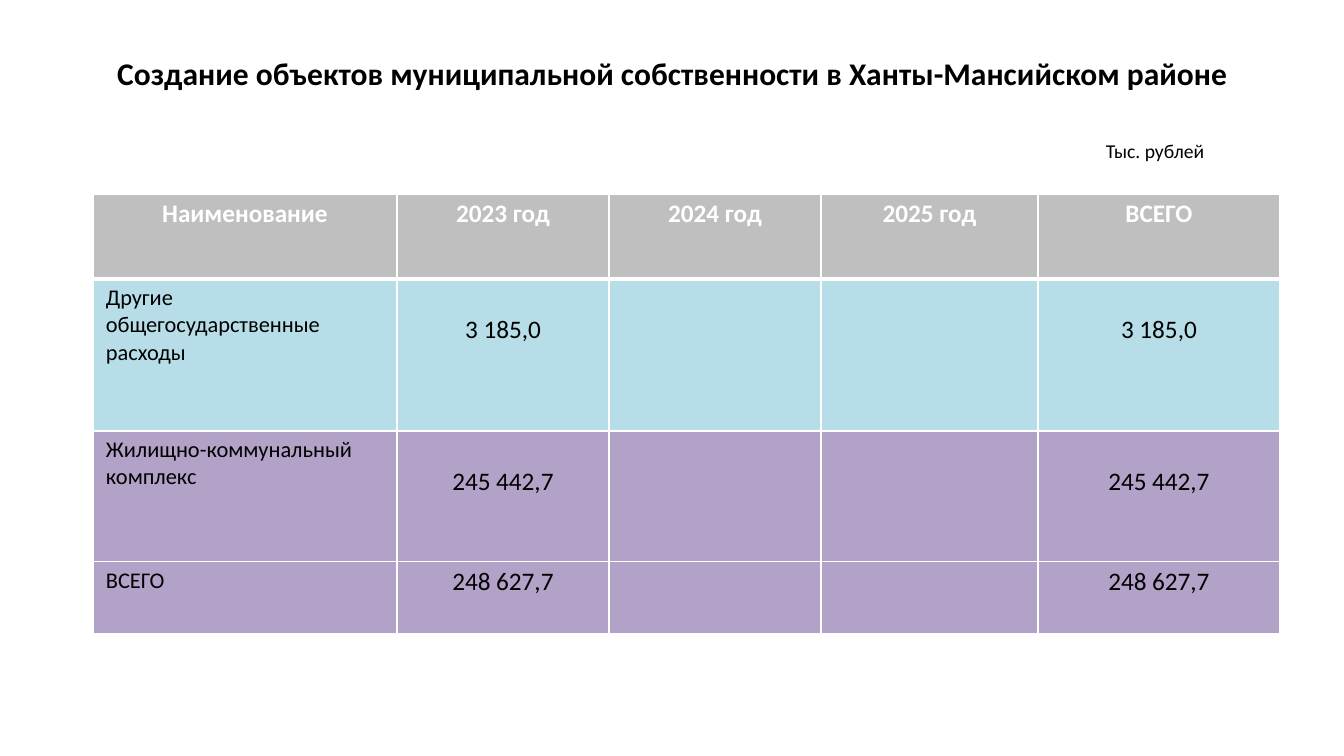
from lxml import etree
from pptx import Presentation
from pptx.dml.color import RGBColor
from pptx.enum.text import MSO_ANCHOR, MSO_AUTO_SIZE, PP_ALIGN
from pptx.oxml.ns import qn
from pptx.util import Emu, Pt

LEFT, CENTER = PP_ALIGN.LEFT, PP_ALIGN.CENTER
MIDDLE, TOP = MSO_ANCHOR.MIDDLE, MSO_ANCHOR.TOP
NO_FIT = MSO_AUTO_SIZE.NONE

TITLE_ONLY = 5
PAGE_WIDTH, PAGE_HEIGHT = 1344, 756
SCALE = 12192000 / PAGE_WIDTH
FONT = "Calibri"
COLOURS = {
    "text": "000000",
    "white": "FFFFFF",
    "header": "BFBFBF",
    "general": "B7DEE8",
    "housing": "B3A2C7",
}

COLUMN_WIDTHS = [304, 212, 212, 217, 242]
CELL_SIDE, CELL_TOP = 13, 5
LOWERED_TOP = 36  # top inset that drops a value to the second text line

# Row: height, fill, top inset of the values, cell texts
ROWS = [
    (85, "header", CELL_TOP,
     ["Наименование", "2023 год", "2024 год", "2025 год", "ВСЕГО"]),
    (152, "general", LOWERED_TOP,
     ["Другие общегосударственные расходы", "3 185,0", "", "", "3 185,0"]),
    (131, "housing", LOWERED_TOP,
     ["Жилищно-коммунальный комплекс", "245 442,7", "", "", "245 442,7"]),
    (72, "housing", CELL_TOP,
     ["ВСЕГО", "248 627,7", "", "", "248 627,7"]),
]


def px(length):
    return Emu(round(length * SCALE))


def colour(name):
    return RGBColor.from_string(COLOURS[name])


def write(frame, text, size=18, tint="text", bold=False, align=LEFT):
    para = frame.paragraphs[0]
    para.alignment = align
    span = para.add_run()
    span.text = text
    span.font.name = FONT
    span.font.size = Pt(size)
    span.font.bold = bold
    span.font.color.rgb = colour(tint)


def set_borders(cell, **widths):
    """Draw white cell borders; widths are points keyed L, R, T, B."""
    properties = cell._tc.get_or_add_tcPr()
    for index, (side, width) in enumerate(widths.items()):
        line = etree.Element(qn(f"a:ln{side}"), w=str(Pt(width)))
        fill = etree.SubElement(line, qn("a:solidFill"))
        etree.SubElement(fill, qn("a:srgbClr"), val=COLOURS["white"])
        properties.insert(index, line)


class Slide:
    def __init__(self, deck):
        self.page = deck.slides.add_slide(deck.slide_layouts[TITLE_ONLY])

    def title(self, text, left, top, width, height, **style):
        box = self.page.shapes.title
        box.left, box.top = px(left), px(top)
        box.width, box.height = px(width), px(height)
        frame = box.text_frame
        frame.auto_size = NO_FIT
        frame.vertical_anchor = MIDDLE
        write(frame, text, **style)

    def label(self, text, left, top, width, height, **style):
        box = self.page.shapes.add_textbox(
            px(left), px(top), px(width), px(height))
        box.text_frame.word_wrap = True
        write(box.text_frame, text, **style)

    def table(self, left, top, widths, rows):
        heights = [row[0] for row in rows]
        table = self.page.shapes.add_table(
            len(rows), len(widths), px(left), px(top),
            px(sum(widths)), px(sum(heights))).table
        table.horz_banding = False
        for column, width in zip(table.columns, widths):
            column.width = px(width)
        for row_index, (height, fill, value_top, texts) in enumerate(rows):
            table.rows[row_index].height = px(height)
            for column_index, text in enumerate(texts):
                cell = table.cell(row_index, column_index)
                inset = value_top if text and column_index else CELL_TOP
                self.cell(cell, fill, inset)
                set_borders(cell, L=1, R=1,
                            T=3 if row_index == 1 else 1,
                            B=3 if row_index == 0 else 1)
                if not text:
                    continue
                if row_index == 0:
                    style = dict(tint="white", bold=True, align=CENTER)
                elif column_index == 0:
                    style = dict(size=16)
                else:
                    style = dict(align=CENTER)
                write(cell.text_frame, text, **style)

    def cell(self, cell, fill, inset):
        cell.fill.solid()
        cell.fill.fore_color.rgb = colour(fill)
        cell.vertical_anchor = TOP
        cell.margin_left = cell.margin_right = px(CELL_SIDE)
        cell.margin_top, cell.margin_bottom = px(inset), px(CELL_TOP)


def main():
    deck = Presentation()
    deck.slide_width, deck.slide_height = px(PAGE_WIDTH), px(PAGE_HEIGHT)
    slide = Slide(deck)

    # Heading
    slide.title(
        "Создание объектов муниципальной собственности в Ханты-Мансийском районе",
        68, 37, 1210, 72, size=22.5, bold=True, align=CENTER)

    # Spending by year
    slide.table(93, 194, COLUMN_WIDTHS, ROWS)

    # Unit of measure
    slide.label("Тыс. рублей", 1096, 134, 169, 34, size=14)

    deck.save("out.pptx")


if __name__ == "__main__":
    main()
